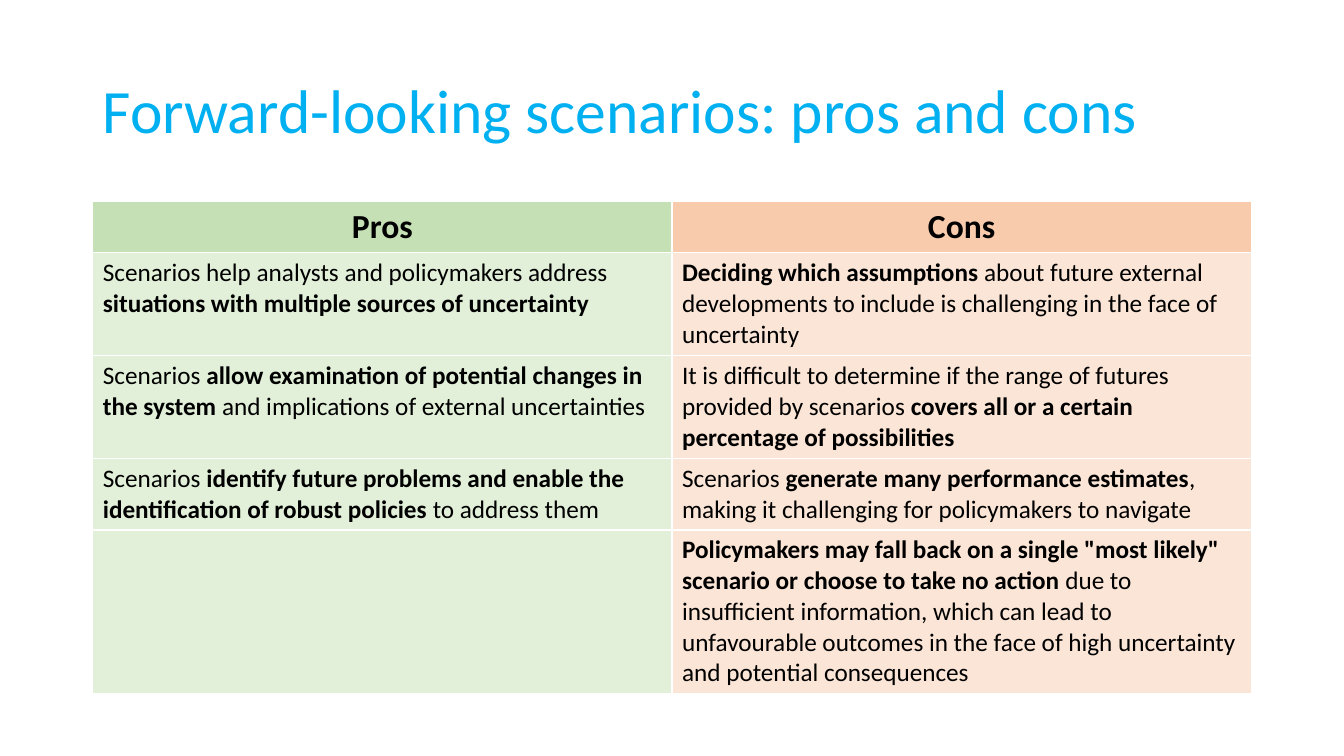
from typing import NamedTuple

from pptx import Presentation
from pptx.dml.color import RGBColor
from pptx.enum.text import MSO_ANCHOR, PP_ALIGN
from pptx.util import Inches, Pt

FONT = "Calibri"
COLORS = {
    "title": "00B0F0",
    "text": "000000",
    "pros_head": "C5E0B4",
    "pros_body": "E2F0D9",
    "cons_head": "F8CBAD",
    "cons_body": "FBE5D6",
}
WIDTH, HEIGHT = Inches(13.33), Inches(7.5)
MARGIN = Inches(0.92)
CONTENT_WIDTH = WIDTH - 2 * MARGIN
TITLE_TOP, TITLE_HEIGHT = Inches(0.4), Inches(1.45)
TABLE_TOP = Inches(2)
ROW_HEIGHTS = [Inches(h) for h in (0.5, 1.02, 1.02, 0.71, 1.62)]


class Span(NamedTuple):
    text: str
    bold: bool = False


class Column(NamedTuple):
    heading: str
    head_fill: str
    body_fill: str
    points: list[list[Span]]


COLUMNS = [
    Column("Pros", "pros_head", "pros_body", [
        [Span("Scenarios help analysts and policymakers address "),
         Span("situations with multiple sources of uncertainty", True)],
        [Span("Scenarios "),
         Span("allow examination of potential changes in the system ", True),
         Span("and implications of external uncertainties")],
        [Span("Scenarios "),
         Span("identify future problems and enable the identification of robust policies ", True),
         Span("to address them")],
        [],
    ]),
    Column("Cons", "cons_head", "cons_body", [
        [Span("Deciding which assumptions ", True),
         Span("about future external developments to include is challenging "
              "in the face of uncertainty")],
        [Span("It is difficult to determine if the range of futures provided by scenarios "),
         Span("covers all or a certain percentage of possibilities", True)],
        [Span("Scenarios "),
         Span("generate many performance estimates", True),
         Span(", making it challenging for policymakers to navigate")],
        [Span('Policymakers may fall back on a single "most likely" scenario '
              "or choose to take no action ", True),
         Span("due to insufficient information, which can lead to unfavourable outcomes "
              "in the face of high uncertainty and potential consequences")],
    ]),
]


def style_font(font, size: int, color: str) -> None:
    font.name = FONT
    font.size = Pt(size)
    font.color.rgb = RGBColor.from_string(COLORS[color])


def fill_cell(cell, spans: list[Span], fill: str, size: int,
              align: PP_ALIGN = PP_ALIGN.LEFT) -> None:
    cell.fill.solid()
    cell.fill.fore_color.rgb = RGBColor.from_string(COLORS[fill])
    p = cell.text_frame.paragraphs[0]
    p.alignment = align
    style_font(p.font, size, "text")
    for span in spans:
        r = p.add_run()
        r.text = span.text
        r.font.bold = span.bold
        # The table style's own text colour outranks the paragraph font.
        style_font(r.font, size, "text")


def add_title(s, text: str) -> None:
    title = s.shapes.title
    title.left, title.top = MARGIN, TITLE_TOP
    title.width, title.height = CONTENT_WIDTH, TITLE_HEIGHT
    tf = title.text_frame
    tf.text = text
    tf.vertical_anchor = MSO_ANCHOR.MIDDLE
    p = tf.paragraphs[0]
    p.alignment = PP_ALIGN.LEFT
    p.line_spacing = 0.9
    style_font(p.font, 44, "title")


def add_comparison(s, columns: list[Column]) -> None:
    table = s.shapes.add_table(len(ROW_HEIGHTS), len(columns), MARGIN, TABLE_TOP,
                               CONTENT_WIDTH, sum(ROW_HEIGHTS)).table
    table.horz_banding = False
    for row, height in zip(table.rows, ROW_HEIGHTS):
        row.height = height
    for c, column in enumerate(columns):
        fill_cell(table.cell(0, c), [Span(column.heading, True)],
                  column.head_fill, 24, PP_ALIGN.CENTER)
        for r, spans in enumerate(column.points, start=1):
            fill_cell(table.cell(r, c), spans, column.body_fill, 18)


def main() -> None:
    prs = Presentation()
    prs.slide_width, prs.slide_height = WIDTH, HEIGHT
    s = prs.slides.add_slide(prs.slide_layouts.get_by_name("Title Only"))
    add_title(s, "Forward-looking scenarios: pros and cons")
    add_comparison(s, COLUMNS)
    prs.save("out.pptx")


if __name__ == "__main__":
    main()
